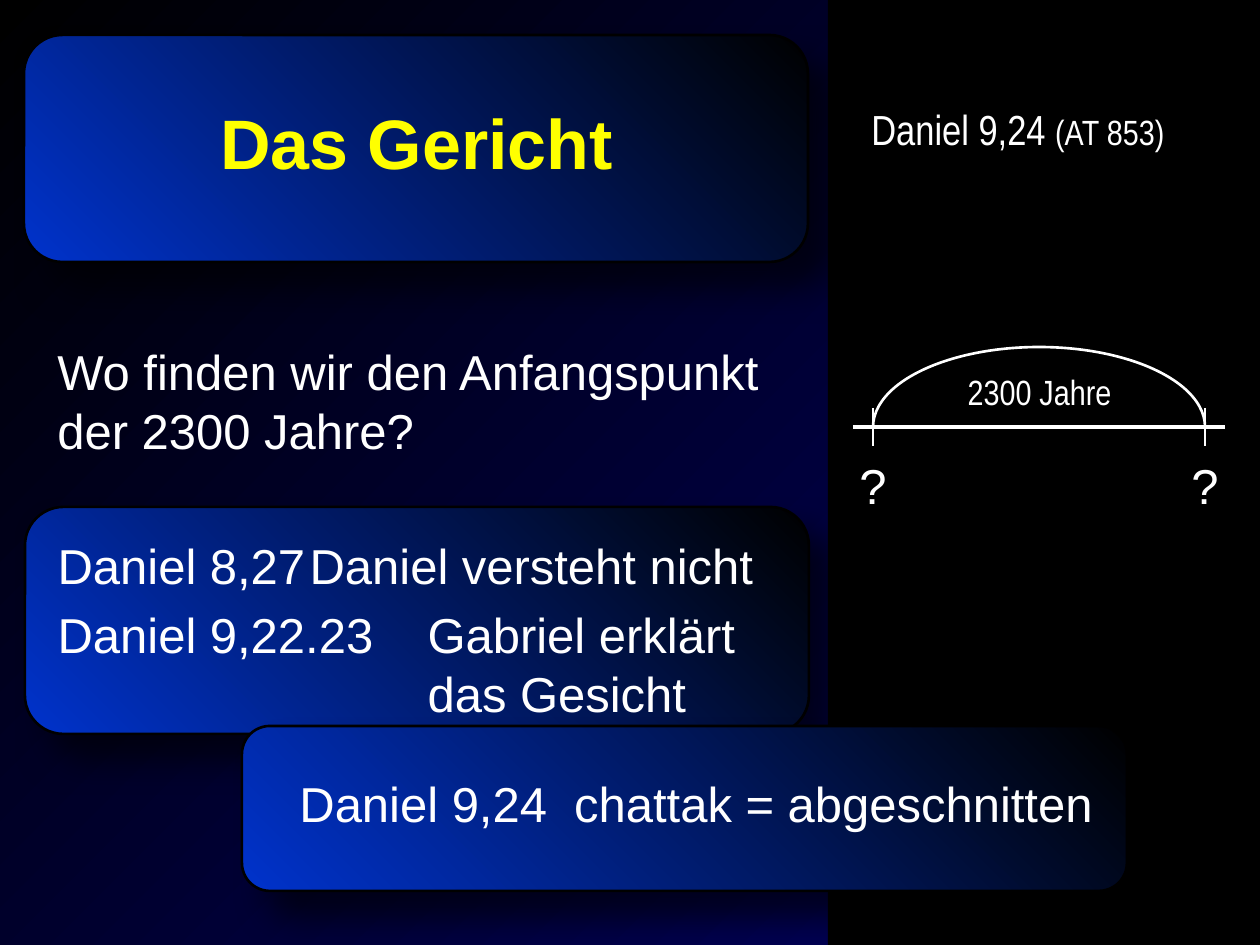
from dataclasses import dataclass

from lxml import etree
from pptx import Presentation
from pptx.dml.color import RGBColor
from pptx.enum.shapes import MSO_CONNECTOR, MSO_SHAPE
from pptx.enum.text import MSO_ANCHOR, MSO_AUTO_SIZE, PP_ALIGN
from pptx.oxml.ns import qn
from pptx.util import Emu, Pt

LEFT, CENTER = PP_ALIGN.LEFT, PP_ALIGN.CENTER
TOP = MSO_ANCHOR.TOP
GROW = MSO_AUTO_SIZE.SHAPE_TO_FIT_TEXT
STRAIGHT = MSO_CONNECTOR.STRAIGHT
RECT, ROUNDED, ARC = MSO_SHAPE.RECTANGLE, MSO_SHAPE.ROUNDED_RECTANGLE, MSO_SHAPE.ARC

COLORS = {
    "black": "000000",
    "night": "000066",
    "blue": "0033CC",
    "yellow": "FFFF00",
    "white": "FFFFFF",
}
EMU_PER_PX = 914400 / 126


@dataclass(frozen=True)
class Box:
    x: int
    y: int
    w: int
    h: int


@dataclass(frozen=True)
class Run:
    text: str
    size: int = 28
    font: str = "Arial"
    color: str = "white"
    bold: bool = False


@dataclass(frozen=True)
class Para:
    runs: tuple[Run, ...]
    align: int = LEFT
    before: int = 0
    tab: int = 0
    hang: int = 0


@dataclass(frozen=True)
class Label:
    box: Box
    paras: tuple[Para, ...]


def px(n: float) -> Emu:
    return Emu(round(n * EMU_PER_PX))


def rgb(name: str) -> RGBColor:
    return RGBColor.from_string(COLORS[name])


def apply(obj, values: dict) -> None:
    for name, value in values.items():
        setattr(obj, name, value)


def bounds(box: Box) -> tuple[Emu, ...]:
    return px(box.x), px(box.y), px(box.w), px(box.h)


def gradient(fill, start: str, end: str, angle: int) -> None:
    fill.gradient()
    fill.gradient_angle = angle
    for stop, name in zip(fill.gradient_stops, (start, end)):
        stop.color.rgb = rgb(name)


def add_panel(slide, box: Box) -> None:
    sp = slide.shapes.add_shape(ROUNDED, *bounds(box))
    sp.adjustments[0] = 0.17
    gradient(sp.fill, "blue", "black", 45)
    sp.line.color.rgb = rgb("black")
    sp.line.width = Pt(1.5)
    sp.shadow.inherit = False
    effects = sp._element.spPr.find(qn("a:effectLst"))
    shadow = etree.SubElement(effects, qn("a:outerShdw"), blurRad=str(Pt(20)),
                              dist=str(Pt(20)), dir="2700000", algn="ctr", rotWithShape="0")
    color = etree.SubElement(shadow, qn("a:srgbClr"), val=COLORS["black"])
    etree.SubElement(color, qn("a:alpha"), val="60000")


def add_line(slide, x1: int, y1: int, x2: int, y2: int, width: float) -> None:
    line = slide.shapes.add_connector(STRAIGHT, px(x1), px(y1), px(x2), px(y2))
    line.line.color.rgb = rgb("white")
    line.line.width = Pt(width)
    etree.SubElement(line._element.spPr, qn("a:effectLst"))


def write_para(p, para: Para) -> None:
    apply(p, {"alignment": para.align, "space_before": Pt(para.before),
              "space_after": Pt(0), "line_spacing": 1.0})
    pPr = p._p.get_or_add_pPr()
    pPr.set("marL", str(px(para.hang)))
    pPr.set("indent", str(-px(para.hang)))
    etree.SubElement(pPr, qn("a:buNone"))
    if para.tab:
        tabs = etree.SubElement(pPr, qn("a:tabLst"))
        etree.SubElement(tabs, qn("a:tab"), pos=str(px(para.tab)), algn="l")
    for run in para.runs:
        r = p.add_run()
        r.text = run.text
        apply(r.font, {"name": run.font, "size": Pt(run.size), "bold": run.bold})
        r.font.color.rgb = rgb(run.color)


def write_label(sp, label: Label) -> None:
    apply(sp, dict(zip(("left", "top", "width", "height"), bounds(label.box))))
    tf = sp.text_frame
    apply(tf, {"word_wrap": True, "auto_size": GROW, "vertical_anchor": TOP})
    for i, para in enumerate(label.paras):
        write_para(tf.add_paragraph() if i else tf.paragraphs[0], para)


def add_label(slide, label: Label) -> None:
    write_label(slide.shapes.add_textbox(*bounds(label.box)), label)


def fill_placeholder(slide, sp, label: Label) -> None:
    write_label(sp, label)
    slide.shapes._spTree.append(sp._element)


PANELS = (Box(25, 507, 784, 227), Box(242, 726, 885, 165), Box(24, 35, 784, 227))
TITLE = Label(Box(34, 93, 765, 97),
              (Para((Run("Das Gericht", 40, color="yellow", bold=True),), CENTER),))
VERSES = Label(Box(45, 529, 765, 202), (
    Para((Run("Daniel 8,27\tDaniel versteht nicht"),), tab=284),
    Para((Run("Daniel 9,22.23\tGabriel erklärt das Gesicht"),), before=6, tab=370, hang=370),
))
LABELS = (
    Label(Box(45, 335, 738, 131),
          (Para((Run("Wo finden wir den Anfangspunkt der 2300 Jahre?"),)),)),
    Label(Box(859, 97, 374, 63),
          (Para((Run("Daniel 9,24 ", 24, "Arial Narrow"),
                 Run("(AT 853)", 20, "Arial Narrow"))),)),
    Label(Box(287, 767, 837, 72),
          (Para((Run("Daniel 9,24  chattak = abgeschnitten"),)),)),
    Label(Box(949, 364, 181, 55),
          (Para((Run("2300 Jahre", 20, "Arial Narrow"),), CENTER),)),
)
SPAN_START, SPAN_END, AXIS_Y = 873, 1205, 427
ARC_HEIGHT, TICK, MARK_WIDTH = 80, 19, 92


def add_timeline(slide) -> None:
    arc = slide.shapes.add_shape(ARC, *bounds(
        Box(SPAN_START, AXIS_Y - ARC_HEIGHT, SPAN_END - SPAN_START, 2 * ARC_HEIGHT)))
    arc.adjustments[0], arc.adjustments[1] = 108.0, 0.0
    arc.fill.background()
    arc.line.color.rgb = rgb("white")
    arc.line.width = Pt(1.5)
    arc.shadow.inherit = False
    add_line(slide, SPAN_START - 20, AXIS_Y, SPAN_END + 20, AXIS_Y, 2.25)
    for x in (SPAN_START, SPAN_END):
        add_line(slide, x, AXIS_Y - TICK, x, AXIS_Y + TICK, 1.5)
        add_label(slide, Label(Box(x - MARK_WIDTH // 2, 449, MARK_WIDTH, 72),
                               (Para((Run("?"),), CENTER),)))


def main() -> None:
    prs = Presentation()
    apply(prs, {"slide_width": px(1260), "slide_height": px(945)})
    slide = prs.slides.add_slide(prs.slide_layouts[1])
    title, body = slide.placeholders
    gradient(slide.background.fill, "black", "night", 315)

    side = slide.shapes.add_shape(RECT, *bounds(Box(828, 0, 432, 945)))
    side.fill.solid()
    side.fill.fore_color.rgb = rgb("black")
    side.line.fill.background()
    side.shadow.inherit = False

    for box in PANELS:
        add_panel(slide, box)
    fill_placeholder(slide, title, TITLE)
    fill_placeholder(slide, body, VERSES)
    for label in LABELS:
        add_label(slide, label)
    add_timeline(slide)
    prs.save("out.pptx")


if __name__ == "__main__":
    main()
